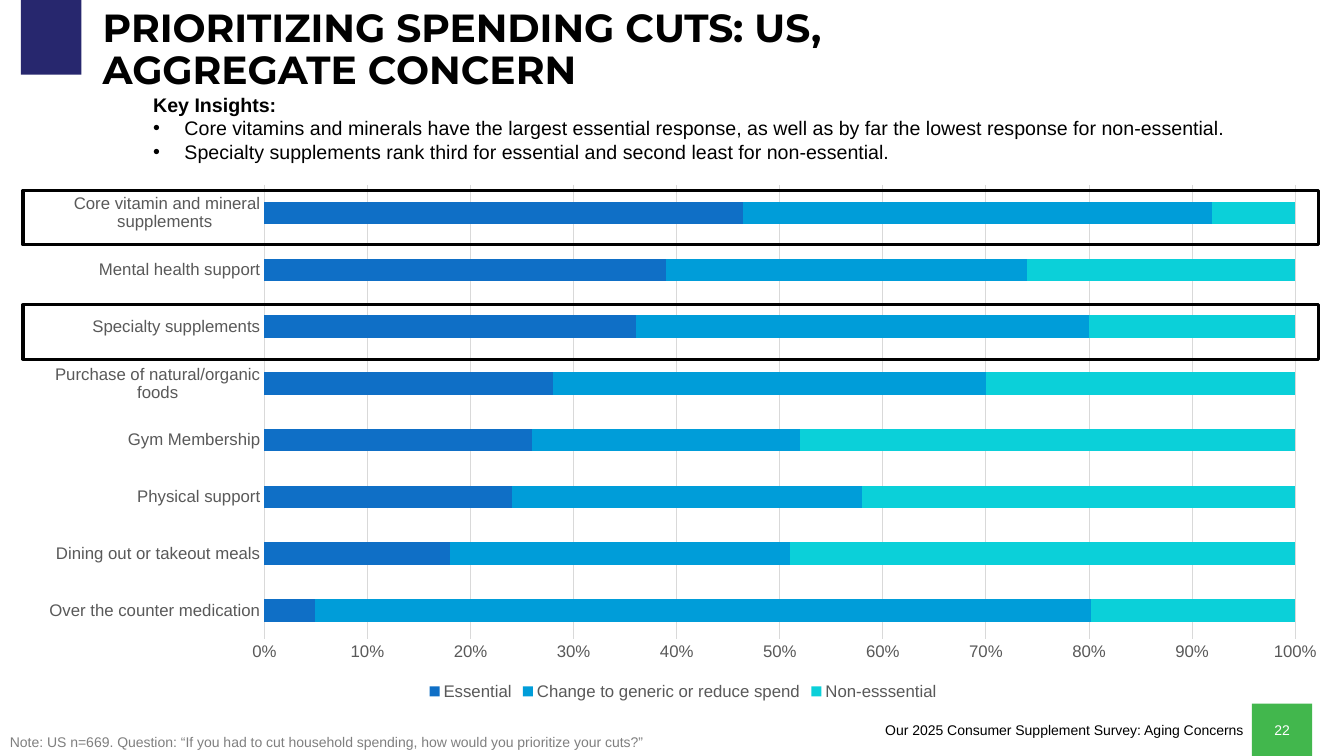
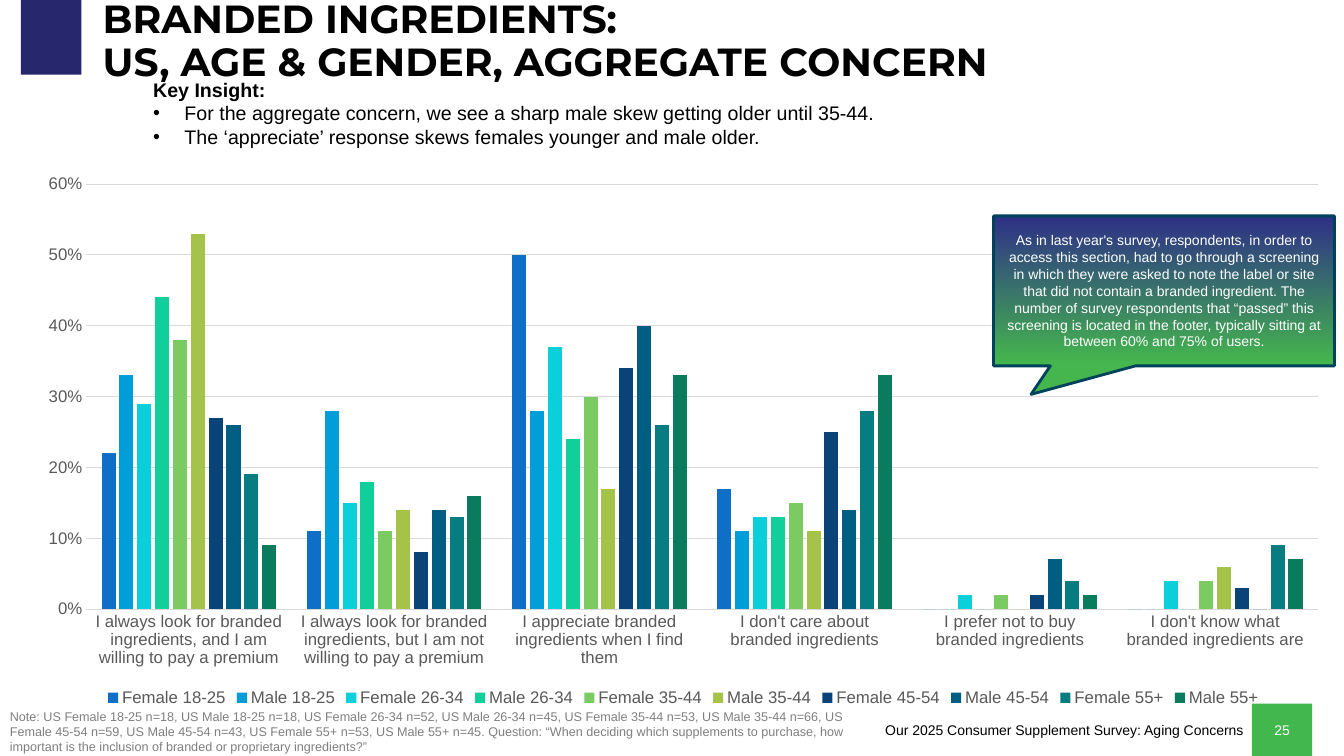
import pptx
import pptx.chart.data
import pptx.dml.color
import pptx.enum.chart
import pptx.enum.shapes
import pptx.enum.text
import pptx.oxml
import pptx.oxml.ns
import pptx.util

Cm = pptx.util.Cm
Pt = pptx.util.Pt
RGB = pptx.dml.color.RGBColor
Align = pptx.enum.text.PP_ALIGN
Anchor = pptx.enum.text.MSO_ANCHOR
Kind = pptx.enum.chart.XL_CHART_TYPE
Shape = pptx.enum.shapes.MSO_SHAPE

NAVY = RGB(0x27, 0x27, 0x6E)
GREEN = RGB(0x42, 0xB7, 0x4D)
BLACK = RGB(0, 0, 0)
WHITE = RGB(255, 255, 255)
GREY = RGB(0x7F, 0x7F, 0x7F)
DARK = RGB(0x59, 0x59, 0x59)
PALE = RGB(0xD9, 0xD9, 0xD9)
INDIGO = RGB(0x2E, 0x30, 0x87)
LEAF = RGB(0x44, 0xB6, 0x4D)
TEAL = RGB(0x00, 0x42, 0x5B)
HUES = [RGB.from_string(code) for code in (
    "0F6FC6", "009DD9", "0BD0D9", "10CF9B", "7CCA62",
    "A5C249", "094377", "005E82", "077D82", "0A7C5D")]

BODY = {"name": "Arial", "bold": False}
HEAD = {"name": "Montserrat", "size": Pt(28), "bold": True, "color": BLACK}
KEY = {**BODY, "size": Pt(14), "color": BLACK}
SMALL = {**BODY, "size": Pt(10), "color": BLACK}
LABEL = {**BODY, "size": Pt(12), "color": DARK}


def style(font, look):
    """Apply a dict of format values to a font."""
    for key, value in look.items():
        if key == "color":
            font.color.rgb = value
        else:
            setattr(font, key, value)


def write(shape, lines, look, align=Align.LEFT, anchor=Anchor.TOP):
    """Fill a shape with paragraphs of one look and return them."""
    frame = shape.text_frame
    frame.word_wrap = True
    frame.vertical_anchor = anchor
    frame.text = "\n".join(lines)
    for para in frame.paragraphs:
        para.alignment = align
        for run in para.runs:
            style(run.font, look)
    return frame.paragraphs


def label(slide, box, lines, look, **place):
    """Add a text box and return its paragraphs."""
    return write(slide.shapes.add_textbox(*map(Cm, box)), lines, look, **place)


def block(slide, box, fill=None, line=None, width=0, kind=Shape.RECTANGLE):
    """Add a flat preset shape with optional fill and line."""
    shape = slide.shapes.add_shape(kind, *map(Cm, box))
    shape.shadow.inherit = False
    if fill is None:
        shape.fill.background()
    else:
        shape.fill.solid()
        shape.fill.fore_color.rgb = fill
    if line is None:
        shape.line.fill.background()
    else:
        shape.line.color.rgb = line
        shape.line.width = Pt(width)
    return shape


def base(deck, number):
    """Add a blank slide with the shared band and footer."""
    slide = deck.slides.add_slide(deck.slide_layouts[6])
    block(slide, (0.53, -0.13, 1.52, 2.01), NAVY)
    label(slide, (21.95, 18.06, 9.63, 0.69),
          ["Our 2025 Consumer Supplement Survey: Aging Concerns"],
          SMALL, align=Align.RIGHT)
    tab = block(slide, (31.55, 17.73, 1.52, 1.32), GREEN)
    write(tab, [str(number)], {**SMALL, "color": WHITE}, Align.CENTER, Anchor.MIDDLE)
    return slide


def title(slide, top, text):
    """Add the slide title."""
    para = label(slide, (2.34, top, 29.21, 1.27), [text], HEAD, anchor=Anchor.MIDDLE)[0]
    para.line_spacing = 0.9


def note(slide, box, text, size):
    """Add the grey survey note."""
    label(slide, box, [text], {**SMALL, "size": Pt(size), "color": GREY})


def insight(slide, top, head, points):
    """Add a bold heading with bulleted points."""
    paras = label(slide, (3.61, top, 27.94, 2.06), [head, *points], KEY)
    paras[0].runs[0].font.bold = True
    for para in paras[1:]:
        props = para._p.get_or_add_pPr()
        props.set("marL", str(Cm(0.79)))
        props.set("indent", str(-Cm(0.79)))
        for tag, name, value in (("buFont", "typeface", "Arial"), ("buChar", "char", "•")):
            mark = pptx.oxml.parse_xml(f'<a:{tag} {pptx.oxml.ns.nsdecls("a")} {name}="{value}"/>')
            props.append(mark)


def graph(slide, box, kind, cats, rows, step, top, gap, lap):
    """Add a bar chart with the shared axis, grid and legend style."""
    data = pptx.chart.data.CategoryChartData(number_format="0%")
    data.categories = cats
    for name, values in rows:
        data.add_series(name, values)
    chart = slide.shapes.add_chart(kind, *map(Cm, box), data).chart
    style(chart.font, LABEL)
    chart.has_title = False
    chart.has_legend = True
    chart.legend.position = pptx.enum.chart.XL_LEGEND_POSITION.BOTTOM
    chart.legend.include_in_layout = False
    style(chart.legend.font, LABEL)
    none = pptx.enum.chart.XL_TICK_MARK.NONE
    for axis in (chart.category_axis, chart.value_axis):
        axis.major_tick_mark = none
        axis.minor_tick_mark = none
        style(axis.tick_labels.font, LABEL)
    chart.category_axis.has_major_gridlines = False
    scale = chart.value_axis
    scale.has_major_gridlines = True
    scale.minimum_scale, scale.maximum_scale, scale.major_unit = 0, top, step
    scale.tick_labels.number_format = "0%"
    scale.tick_labels.number_format_is_linked = False
    scale.format.line.fill.background()
    for line in (chart.category_axis.format.line, scale.major_gridlines.format.line):
        line.color.rgb = PALE
        line.width = Pt(0.75)
    plot = chart.plots[0]
    plot.vary_by_categories = False
    plot.gap_width, plot.overlap = gap, lap
    for series, hue in zip(plot.series, HUES):
        series.invert_if_negative = False
        series.format.fill.solid()
        series.format.fill.fore_color.rgb = hue


def frames(slide, box, rows):
    """Outline the given rows of the chart in the box."""
    left, top, wide, _ = box
    for row in rows:
        block(slide, (left, top + 0.41 + row * 1.44, wide - 0.61, 1.37), line=BLACK, width=2.25)


def callout(slide, box, text):
    """Add the gradient speech callout."""
    shape = block(slide, box, LEAF, TEAL, 2, Shape.RECTANGULAR_CALLOUT)
    shape.adjustments[0], shape.adjustments[1] = -0.39, 0.69
    shape.fill.gradient()
    shape.fill.gradient_angle = 270
    for stop, spot, hue in zip(shape.fill.gradient_stops, (0, 0.99), (INDIGO, LEAF)):
        stop.position = spot
        stop.color.rgb = hue
    write(shape, [text], {**SMALL, "color": WHITE}, Align.CENTER, Anchor.MIDDLE)


def cuts(deck):
    """Build the spending cuts slide."""
    slide = base(deck, 22)
    title(slide, 0.64, "PRIORITIZING SPENDING CUTS: US, \vAGGREGATE CONCERN")
    note(slide, (0, 18.36, 22.86, 0.69),
         "Note: US n=669. Question: “If you had to cut household spending, "
         "how would you prioritize your cuts?”", 10)
    insight(slide, 2.21, "Key Insights:", [
        "Core vitamins and minerals have the largest essential response, "
        "as well as by far the lowest response for non-essential.",
        "Specialty supplements rank third for essential and second least for non-essential."])
    box = (0.58, 4.39, 33.27, 13.36)
    cats = ["Over the counter medication", "Dining out or takeout meals",
            "Physical support", "Gym Membership", "Purchase of natural/organic foods",
            "Specialty supplements", "Mental health support",
            "Core vitamin and mineral supplements "]
    rows = [("Essential", (5, 18, 24, 26, 28, 36, 39, 46)),
            ("Change to generic or reduce spend", (76, 33, 34, 26, 42, 44, 35, 45)),
            ("Non-esssential", (20, 49, 42, 48, 30, 20, 26, 8))]
    graph(slide, box, Kind.BAR_STACKED_100, cats, rows, 0.1, 1, 150, 100)
    frames(slide, box, (0, 2))


def brands(deck):
    """Build the branded ingredients slide."""
    slide = base(deck, 25)
    title(slide, 0.43, "BRANDED INGREDIENTS: \vUS, AGE & GENDER, AGGREGATE CONCERN")
    note(slide, (0, 17.73, 22.3, 1.42),
         "Note: US Female 18-25 n=18, US Male 18-25 n=18, US Female 26-34 n=52, "
         "US Male 26-34 n=45, US Female 35-44 n=53, US Male 35-44 n=66, "
         "US Female 45-54 n=59, US Male 45-54 n=43, US Female 55+ n=53, US Male 55+ n=45. "
         "Question: “When deciding which supplements to purchase, how important is "
         "the inclusion of branded or proprietary ingredients?”", 9)
    insight(slide, 1.83, "Key Insight:", [
        "For the aggregate concern, we see a sharp male skew getting older until 35-44.",
        "The ‘appreciate’ response skews females younger and male older."])
    cats = ["I always look for branded ingredients, and I am willing to pay a premium",
            "I always look for branded ingredients, but I am not willing to pay a premium",
            "I appreciate branded ingredients when I find them",
            "I don't care about branded ingredients",
            "I prefer not to buy branded ingredients",
            "I don't know what branded ingredients are"]
    rows = [("Female 18-25", (0.22, 0.11, 0.5, 0.17, 0, 0)),
            ("Male 18-25", (0.33, 0.28, 0.28, 0.11, 0, 0)),
            ("Female 26-34", (0.29, 0.15, 0.37, 0.13, 0.02, 0.04)),
            ("Male 26-34", (0.44, 0.18, 0.24, 0.13, 0, 0)),
            ("Female 35-44", (0.38, 0.11, 0.3, 0.15, 0.02, 0.04)),
            ("Male 35-44", (0.53, 0.14, 0.17, 0.11, 0, 0.06)),
            ("Female 45-54", (0.27, 0.08, 0.34, 0.25, 0.02, 0.03)),
            ("Male 45-54", (0.26, 0.14, 0.4, 0.14, 0.07, 0)),
            ("Female 55+", (0.19, 0.13, 0.26, 0.28, 0.04, 0.09)),
            ("Male 55+", (0.09, 0.16, 0.33, 0.33, 0.02, 0.07))]
    graph(slide, (0.56, 4.14, 33.32, 13.77), Kind.COLUMN_CLUSTERED,
          cats, rows, 0.1, 0.6, 219, -27)
    callout(slide, (25.04, 5.44, 8.59, 3.78),
            "As in last year's survey, respondents, in order to access this section, "
            "had to go through a screening in which they were asked to note the label "
            "or site that did not contain a branded ingredient. The number of survey "
            "respondents that “passed” this screening is located in the footer, "
            "typically sitting at between 60% and 75% of users.")


def main():
    """Build and save the deck."""
    deck = pptx.Presentation()
    deck.slide_width, deck.slide_height = Cm(33.87), Cm(19.05)
    cuts(deck)
    brands(deck)
    deck.save("out.pptx")


if __name__ == "__main__":
    main()
